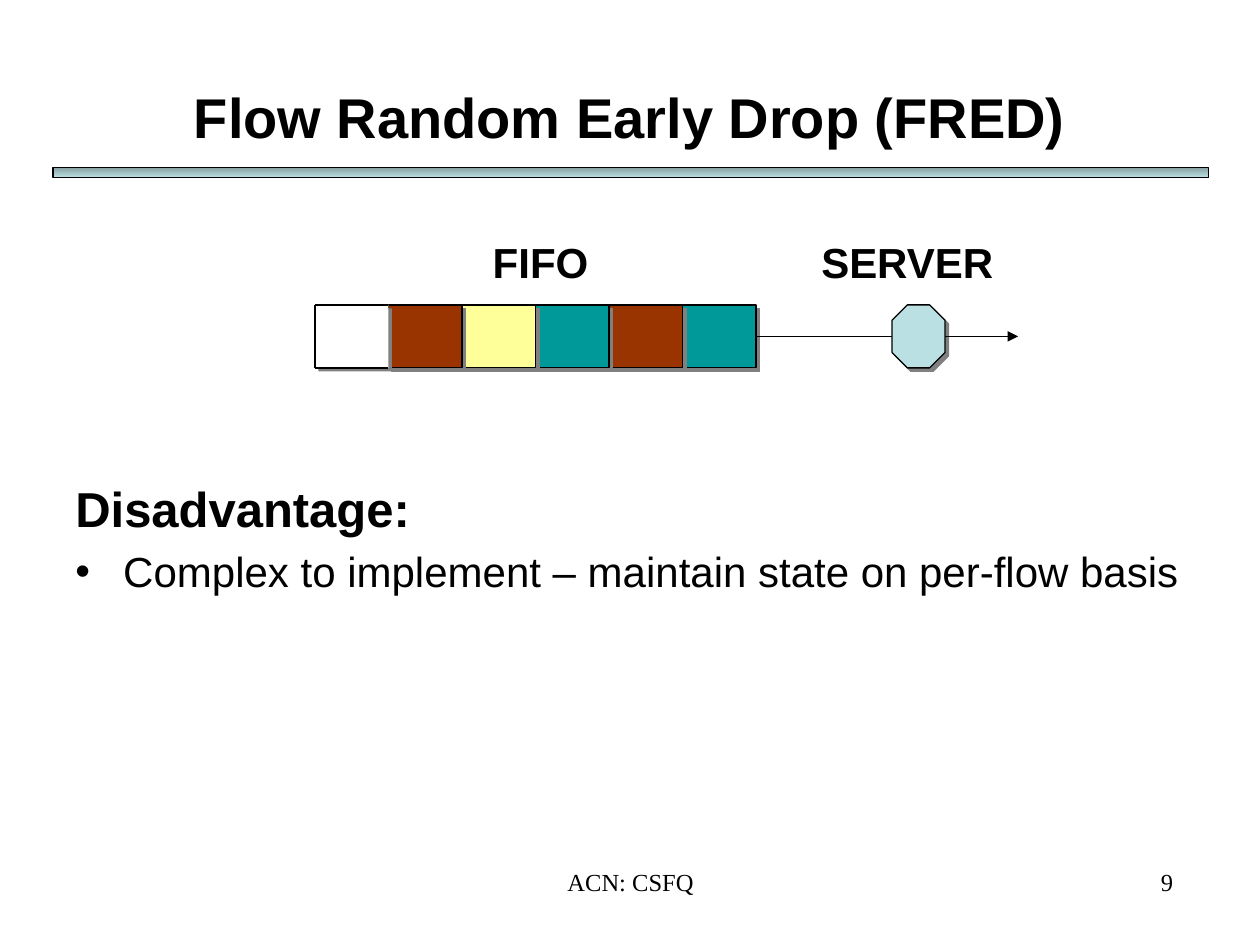
from lxml.etree import SubElement
from pptx import Presentation
from pptx.dml.color import RGBColor
from pptx.enum.shapes import MSO_CONNECTOR, MSO_SHAPE
from pptx.enum.text import MSO_ANCHOR, PP_ALIGN
from pptx.oxml import parse_xml
from pptx.oxml.ns import nsdecls, qn
from pptx.util import Inches, Pt

BLACK, WHITE, PALE = "000000", "FFFFFF", "BBE0E3"
TEAL, BROWN, YELLOW = "009999", "993300", "FFFF99"
QUEUE = [WHITE, BROWN, YELLOW, TEAL, BROWN, TEAL]
HEADING = {"name": "Arial", "bold": True}
FOOTER = {"name": "Times New Roman", "size": Pt(14)}


def color(value):
    return RGBColor.from_string(value)


def add_shadow(properties, distance=2.8):
    """Give a shape or a run a hard grey shadow to the lower right."""
    properties.append(parse_xml(
        f'<a:effectLst {nsdecls("a")}><a:outerShdw dist="{Pt(distance)}" dir="2700000" '
        'algn="ctr" rotWithShape="0"><a:srgbClr val="808080"/></a:outerShdw></a:effectLst>'))


def write(para, text, formats, align=PP_ALIGN.LEFT):
    para.alignment = align
    span = para.add_run()
    span.text = text
    for name, value in formats.items():
        setattr(span.font, name, value)
    span.font.color.rgb = color(BLACK)
    return span


def add_text_box(page, box):
    frame = page.shapes.add_textbox(*map(Inches, box)).text_frame
    frame.word_wrap = True
    return frame


def add_label(page, box, text, formats, align=PP_ALIGN.LEFT):
    write(add_text_box(page, box).paragraphs[0], text, formats, align)


def add_block(page, kind, box, fill, outlined=True):
    """Add a filled shape with a shadow."""
    block = page.shapes.add_shape(kind, *map(Inches, box))
    block.fill.solid()
    block.fill.fore_color.rgb = color(fill)
    if outlined:
        block.line.color.rgb = color(BLACK)
        block.line.width = Pt(0.75)
    else:
        block.line.fill.background()
    add_shadow(block._element.spPr)
    return block


def add_line(page, start, end, arrow=False):
    line = page.shapes.add_connector(MSO_CONNECTOR.STRAIGHT, *map(Inches, start + end))
    line.line.color.rgb = color(BLACK)
    line.line.width = Pt(0.75)
    if arrow:
        SubElement(line.line._get_or_add_ln(), qn("a:tailEnd"), type="triangle")
    SubElement(line._element.spPr, qn("a:effectLst"))


def place_title(page, box, text):
    title = page.shapes.title
    title.left, title.top, title.width, title.height = map(Inches, box)
    title.text_frame.vertical_anchor = MSO_ANCHOR.MIDDLE
    span = write(title.text_frame.paragraphs[0], text,
                 {**HEADING, "size": Pt(32)}, PP_ALIGN.CENTER)
    fill = span.font._element.find(qn("a:solidFill"))
    add_shadow(span.font._element)
    fill.addnext(span.font._element.find(qn("a:effectLst")))


def place_rule(page, box):
    """Add the shaded bar under the title."""
    rule = page.shapes.add_shape(MSO_SHAPE.RECTANGLE, *map(Inches, box))
    rule.shadow.inherit = False
    rule.fill.gradient()
    rule.fill.gradient_angle = 270
    for stop, value in zip(rule.fill.gradient_stops, ["86A0A2", PALE]):
        stop.color.rgb = color(value)
    rule.line.color.rgb = color(BLACK)
    rule.line.width = Pt(0.75)


def place_queue(page, box):
    """Add the cells from right to left; the last one is empty and open on its right."""
    left, top, width, height = box
    cell = width / len(QUEUE)
    for index, fill in reversed(list(enumerate(QUEUE))):
        add_block(page, MSO_SHAPE.RECTANGLE, (left + index * cell, top, cell, height),
                  fill, outlined=fill != WHITE)
    bottom = top + height
    for edge in (top, bottom):
        add_line(page, (left, edge), (left + cell, edge))
    add_line(page, (left, top), (left, bottom))


def place_server(page, box, queue_end, arrow_end):
    left, top, width, height = box
    middle = top + height / 2
    add_line(page, (queue_end, middle), (left, middle))
    server = add_block(page, MSO_SHAPE.OCTAGON, box, PALE)
    server.adjustments[0] = 0.29
    add_line(page, (left + width, middle), (arrow_end, middle), arrow=True)


def place_body(page, box, heading, point):
    frame = add_text_box(page, box)
    write(frame.paragraphs[0], heading, {**HEADING, "size": Pt(28)})
    para = frame.add_paragraph()
    para.space_before = Pt(4.8)
    write(para, point, {"name": "Arial", "size": Pt(24)})
    properties = para._p.get_or_add_pPr()
    properties.set("marL", str(Inches(0.38)))
    properties.set("indent", str(Inches(-0.38)))
    SubElement(properties, qn("a:buFont"), typeface="Arial")
    SubElement(properties, qn("a:buChar"), char="•")


def main():
    deck = Presentation()
    deck.slide_width, deck.slide_height = Inches(10), Inches(7.5)
    page = deck.slides.add_slide(deck.slide_layouts[5])
    label = {**HEADING, "size": Pt(24)}

    place_title(page, (0.5, 0.3, 9, 1.25), "Flow Random Early Drop (FRED)")
    place_rule(page, (0.42, 1.33, 9.17, 0.08))
    add_label(page, (3.58, 1.83, 1.42, 0.5), "FIFO", label, PP_ALIGN.CENTER)
    add_label(page, (6.42, 1.83, 1.83, 0.5), "SERVER", label)
    place_queue(page, (2.5, 2.42, 3.5, 0.5))
    place_server(page, (7.08, 2.42, 0.42, 0.5), queue_end=6, arrow_end=8.08)
    place_body(page, (0.5, 3.75, 9, 2.42), "Disadvantage:",
               "Complex to implement – maintain state on per-flow basis")
    add_label(page, (3.42, 6.83, 3.17, 0.5), "ACN: CSFQ", FOOTER, PP_ALIGN.CENTER)
    add_label(page, (7.33, 6.83, 2.08, 0.5), "9", FOOTER, PP_ALIGN.RIGHT)
    deck.save("out.pptx")


if __name__ == "__main__":
    main()
